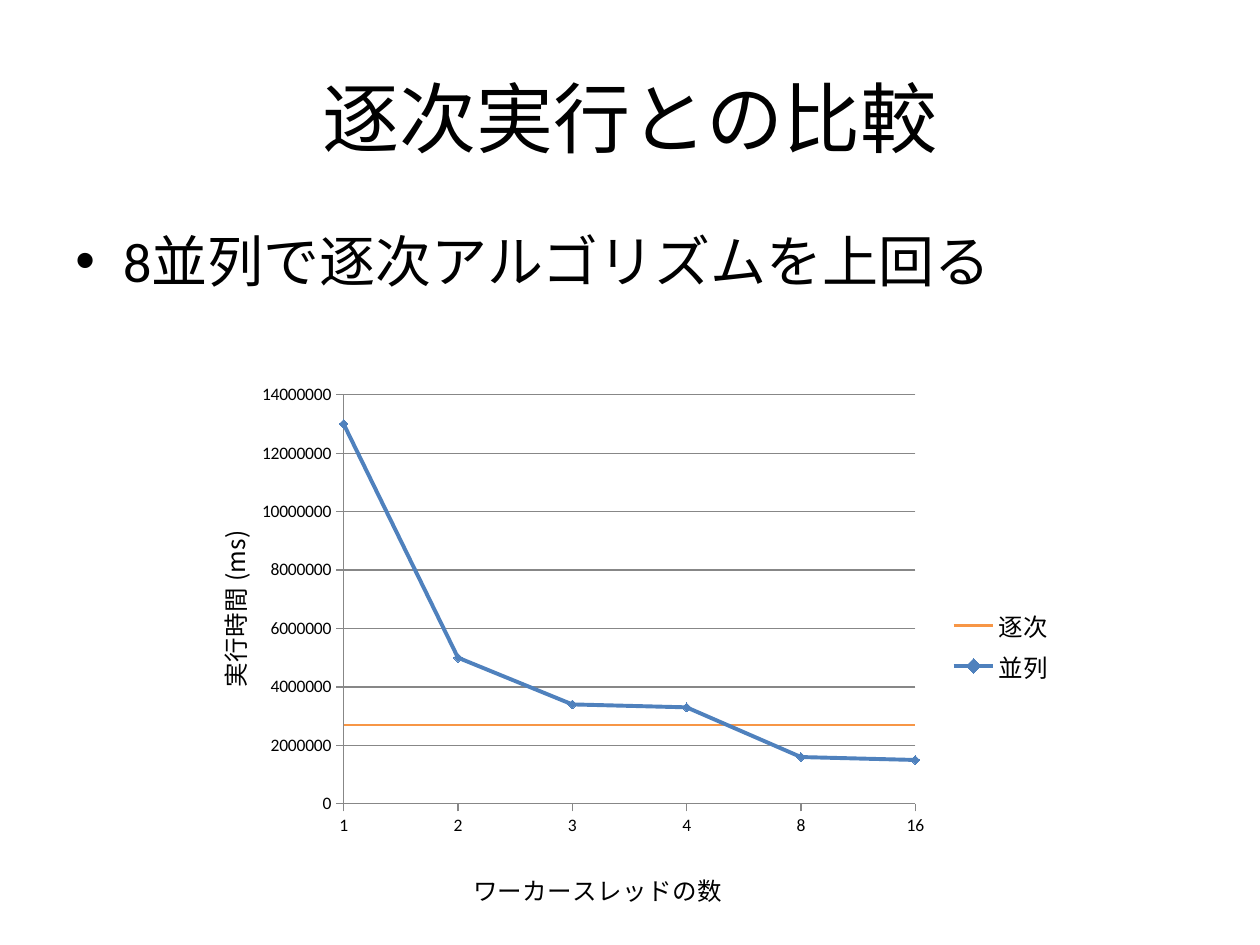
from lxml import etree
from pptx import Presentation
from pptx import util as u
from pptx.chart.data import CategoryChartData
from pptx.dml.color import RGBColor
from pptx.enum import chart as ch
from pptx.enum import text
from pptx.oxml import parse_xml
from pptx.oxml.ns import nsdecls, qn

LATIN, JAPANESE = "Calibri", "Noto Sans CJK JP"
BLACK, GRAY, ORANGE, BLUE = "000000", "878787", "F79646", "4F81BD"


def color(hex_code):
    return RGBColor.from_string(hex_code)


def style_font(font, size, name=LATIN):
    font.size, font.name, font.bold = u.Pt(size), name, False
    font.color.rgb = color(BLACK)


def style_line(line, hex_code, width):
    line.color.rgb = color(hex_code)
    line.width = u.Pt(width)


def add_text(slide, wording, left, top, width, height, size, anchor):
    box = slide.shapes.add_textbox(*map(u.Inches, (left, top, width, height)))
    frame = box.text_frame
    frame.word_wrap = True
    frame.vertical_anchor = anchor
    paragraph = frame.paragraphs[0]
    paragraph.text = wording
    style_font(paragraph.font, size)
    return paragraph


def add_bullet(paragraph, indent):
    props = paragraph._p.get_or_add_pPr()
    props.set("marL", str(u.Inches(indent)))
    props.set("indent", str(-u.Inches(indent)))
    bullet_font = parse_xml(f'<a:buFont {nsdecls("a")} typeface="Arial"/>')
    bullet = parse_xml(f'<a:buChar {nsdecls("a")} char="•"/>')
    # Bullet elements come before the default run properties
    defaults = props.find(qn("a:defRPr"))
    defaults.addprevious(bullet_font)
    defaults.addprevious(bullet)


def make_layout(**places):
    """Manual layout, in fractions of the chart area."""
    layout = parse_xml(f'<c:layout {nsdecls("c")}><c:manualLayout/></c:layout>')
    if "w" in places:
        etree.SubElement(layout[0], qn("c:layoutTarget")).set("val", "inner")
    for side in ("x", "y"):
        etree.SubElement(layout[0], qn(f"c:{side}Mode")).set("val", "edge")
    for key, value in places.items():
        etree.SubElement(layout[0], qn(f"c:{key}")).set("val", str(value))
    return layout


def style_axis(axis, title, x, y):
    axis.major_tick_mark = ch.XL_TICK_MARK.OUTSIDE
    axis.minor_tick_mark = ch.XL_TICK_MARK.NONE
    style_line(axis.format.line, GRAY, 0.75)
    style_font(axis.tick_labels.font, 10)
    axis_title = axis.axis_title
    axis_title.text_frame.text = title
    style_font(axis_title.text_frame.paragraphs[0].runs[0].font, 14, JAPANESE)
    element = axis_title._element
    for old in element.findall(qn("c:layout")):
        element.remove(old)
    element.find(qn("c:tx")).addnext(make_layout(x=x, y=y))


def start_on_axis(values):
    """Let the lines start on the value axis itself."""
    element = values._element
    for old in element.findall(qn("c:crossBetween")):
        element.remove(old)
    cross = parse_xml(f'<c:crossBetween {nsdecls("c")} val="midCat"/>')
    before = element.find(qn("c:crosses"))
    if before is None:
        before = element.find(qn("c:crossAx"))
    before.addnext(cross)


def add_time_chart(slide):
    times = CategoryChartData(number_format="General")
    times.categories = ["1", "2", "3", "4", "8", "16"]
    times.add_series("逐次", [2700000] * 6)
    times.add_series("並列", [13000000, 5000000, 3400000, 3300000, 1600000, 1500000])
    area = map(u.Inches, (1.38, 2.96, 7.09, 4.33))
    chart = slide.shapes.add_chart(ch.XL_CHART_TYPE.LINE_MARKERS, *area, times).chart
    chart.has_title = False
    style_font(chart.font, 10)

    # Series
    plot = chart.plots[0]
    plot.vary_by_categories = False
    sequential, parallel = plot.series
    for series, hex_code, width in ((sequential, ORANGE, 1.5), (parallel, BLUE, 2.25)):
        series.smooth = False
        style_line(series.format.line, hex_code, width)
    sequential.marker.style = ch.XL_MARKER_STYLE.NONE
    marker = parallel.marker
    marker.style, marker.size = ch.XL_MARKER_STYLE.DIAMOND, 5
    marker.format.fill.solid()
    marker.format.fill.fore_color.rgb = color(BLUE)
    style_line(marker.format.line, BLUE, 0.75)

    # Axes
    style_axis(chart.category_axis, "ワーカースレッドの数", 0.33, 0.9)
    values = chart.value_axis
    style_axis(values, "実行時間 (ms)", 0.04, 0.28)
    values.minimum_scale, values.maximum_scale = 0, 14000000
    values.major_unit = 2000000
    values.has_major_gridlines = True
    style_line(values.major_gridlines.format.line, GRAY, 0.75)
    start_on_axis(values)

    # Legend and plot area
    chart.has_legend = True
    chart.legend.position = ch.XL_LEGEND_POSITION.RIGHT
    chart.legend.include_in_layout = False
    style_font(chart.legend.font, 14, JAPANESE)
    plot_area = chart._chartSpace.chart.plotArea
    for old in plot_area.findall(qn("c:layout")):
        plot_area.remove(old)
    plot_area.insert(0, make_layout(x=0.19, y=0.04, w=0.64, h=0.75))


def main():
    deck = Presentation()
    deck.slide_width, deck.slide_height = u.Inches(10), u.Inches(7.5)
    slide = deck.slides.add_slide(deck.slide_layouts[6])

    # Heading
    heading = add_text(slide, "逐次実行との比較", 0.5, 0.3, 9, 1.25, 44,
                       text.MSO_ANCHOR.MIDDLE)
    heading.alignment = text.PP_ALIGN.CENTER

    # Key message
    message = add_text(slide, "8並列で逐次アルゴリズムを上回る", 0.5, 1.75, 9, 1.13, 32,
                       text.MSO_ANCHOR.TOP)
    add_bullet(message, 0.38)
    message.space_before = u.Pt(6.4)

    # Execution times
    add_time_chart(slide)
    deck.save("out.pptx")


if __name__ == "__main__":
    main()
